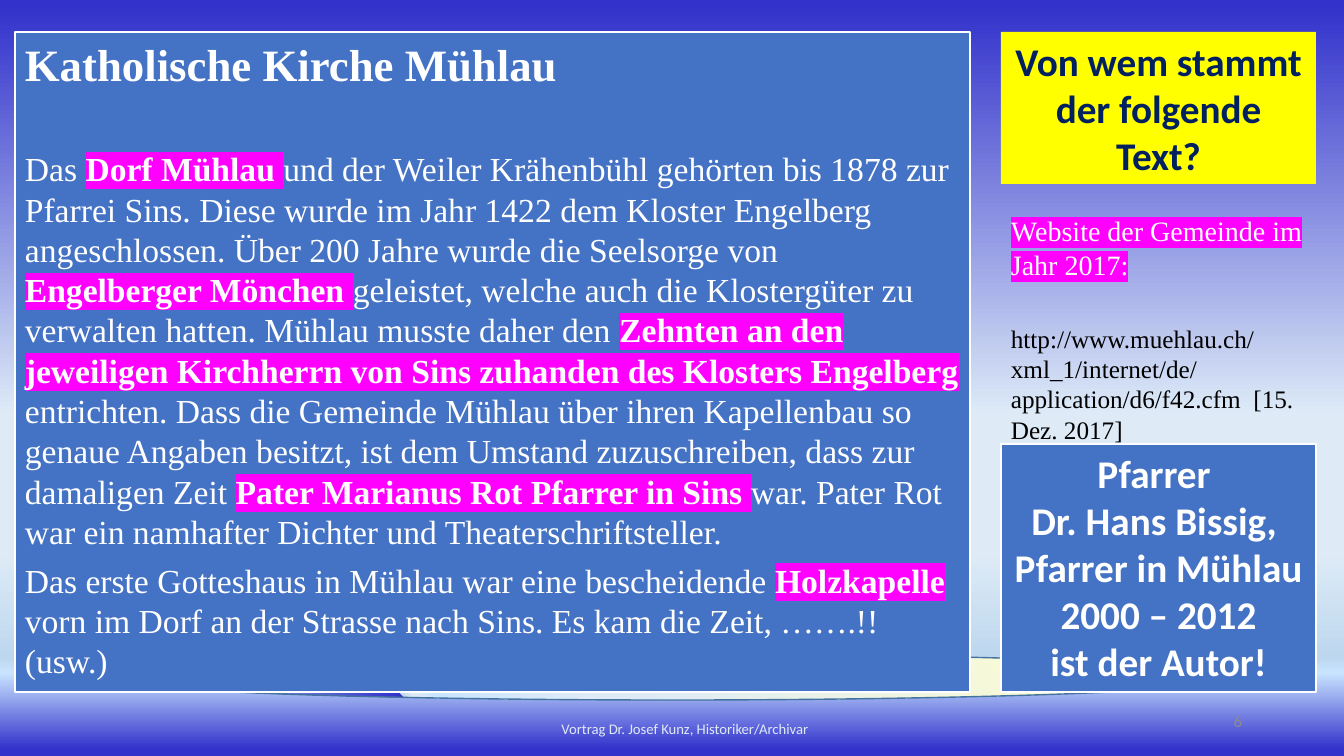
from lxml import etree
from pptx import Presentation
from pptx.dml.color import RGBColor
from pptx.enum.shapes import MSO_SHAPE
from pptx.enum.text import MSO_ANCHOR, PP_ALIGN
from pptx.oxml.ns import qn
from pptx.util import Emu, Pt

# --- Content ---
C = {"blue": "4472C4", "white": "FFFFFF", "yellow": "FFFF00", "navy": "002060",
     "pink": "FF00FF", "black": "000000", "grey": "8C8C8C", "outline": "43739E",
     "indigo": "3333CC", "pale": "DEEBF7", "sky": "BDD7EE", "ice": "C9E4FF",
     "cream": "FFFFCC"}
SERIF, SANS = "Times New Roman", "Calibri"

BACKGROUND = [(1, "indigo"), (55, "pale"), (58, "pale"), (73, "pale"),
              (87, "sky"), (89, "ice"), (99, "indigo")]
ELLIPSE = [(10, "cream"), (55, "pale"), (58, "pale"), (71, "ice"),
           (73, "pale"), (74, "sky"), (74, "indigo"), (96, "sky")]

TITLE = "Katholische Kirche Mühlau"
# Runs alternate: plain, marked, plain, marked ...
HISTORY = [
    "Das ", "Dorf Mühlau ",
    "und der Weiler Krähenbühl gehörten bis 1878 zur Pfarrei Sins. Diese wurde im "
    "Jahr 1422 dem Kloster Engelberg angeschlossen. Über 200 Jahre wurde die "
    "Seelsorge von ",
    "Engelberger Mönchen ",
    "geleistet, welche auch die Klostergüter zu verwalten hatten. Mühlau musste "
    "daher den ",
    "Zehnten an den jeweiligen Kirchherrn von Sins zuhanden des Klosters Engelberg ",
    "entrichten. Dass die Gemeinde Mühlau über ihren Kapellenbau so genaue Angaben "
    "besitzt, ist dem Umstand zuzuschreiben, dass zur damaligen Zeit ",
    "Pater Marianus Rot Pfarrer in Sins ",
    "war. Pater Rot war ein namhafter Dichter und Theaterschriftsteller."]
CHAPEL = [
    "Das erste Gotteshaus in Mühlau war eine bescheidende ", "Holzkapelle",
    " vorn im Dorf an der Strasse nach Sins. Es kam die Zeit, …….!! (usw.)"]
QUESTION = "Von wem stammt der folgende Text?"
WEBSITE = "Website der Gemeinde im Jahr 2017:"
ADDRESS = ("http://www.muehlau.ch/xml_1/internet/de/application/d6/f42.cfm"
           "  [15. Dez. 2017]")
ANSWER = ["Pfarrer ", "Dr. Hans Bissig, ", "Pfarrer in Mühlau", "2000 – 2012",
          "ist der Autor!"]
FOOTER, PAGE = "Vortrag Dr. Josef Kunz, Historiker/Archivar", "6"

# --- Layout in px ---
PX = 914400 / 100.8
TOP, BOTTOM = 32, 692
COL_X, COL_W = 1001, 315
ANSWER_Y = 444


def px(*lengths):
    return [Emu(round(n * PX)) for n in lengths]


def rgb(name):
    return RGBColor.from_string(C[name])


def set_gradient(fill, parent, stops, angle):
    """Give a fill any number of colour stops; angle runs clockwise."""
    fill.gradient()
    grad = parent.find(".//" + qn("a:gradFill"))
    gs_list = grad.find(qn("a:gsLst"))
    for gs in list(gs_list):
        gs_list.remove(gs)
    for pos, name in stops:
        gs = etree.SubElement(gs_list, qn("a:gs"), pos=str(pos * 1000))
        etree.SubElement(gs, qn("a:srgbClr"), val=C[name])
    grad.find(qn("a:lin")).set("ang", str(angle * 60000))


def add_panel(shape, box, fill, line=None, width=1.5):
    sp = s.shapes.add_shape(shape, *px(*box))
    sp.shadow.inherit = False
    if isinstance(fill, str):
        sp.fill.solid()
        sp.fill.fore_color.rgb = rgb(fill)
    else:
        set_gradient(sp.fill, sp.element.spPr, *fill)
    if line:
        sp.line.color.rgb = rgb(line)
        sp.line.width = Pt(width)
    else:
        sp.line.fill.background()
    return sp


def open_text(sp, anchor=MSO_ANCHOR.TOP):
    tf = sp.text_frame
    tf.word_wrap = True
    tf.vertical_anchor = anchor
    return tf


def add_paragraph(tf, runs, size, font, color, align=PP_ALIGN.LEFT, before=0):
    """runs: (text, bold, highlight colour or None)"""
    p = tf.paragraphs[0] if not tf.paragraphs[0].runs else tf.add_paragraph()
    p.alignment = align
    p.space_before = Pt(before)
    for text, bold, mark in runs:
        r = p.add_run()
        r.text = text
        r.font.size, r.font.name, r.font.bold = Pt(size), font, bold
        r.font.color.rgb = rgb(color)
        if mark:
            highlight = etree.Element(qn("a:highlight"))
            etree.SubElement(highlight, qn("a:srgbClr"), val=C[mark])
            r.font.fill  # colour precedes highlight in the run properties
            r._r.rPr.find(qn("a:solidFill")).addnext(highlight)


def alternate(texts):
    return [(t, i % 2 == 1, "pink" if i % 2 else None) for i, t in enumerate(texts)]


prs = Presentation()
prs.slide_width, prs.slide_height = px(1344, 756)
s = prs.slides.add_slide(prs.slide_layouts[6])

# --- Background and ellipse ---
set_gradient(s.background.fill, s.element, BACKGROUND, 90)
add_panel(MSO_SHAPE.OVAL, (93, 654, 1159, 46), (ELLIPSE, 135), "outline", 1)

# --- Footer and page number ---
for box, text, size, color, align in [
        ((438, 716, 494, 26), FOOTER, 10.5, "pale", PP_ALIGN.CENTER),
        ((950, 701, 302, 40), PAGE, 12, "grey", PP_ALIGN.RIGHT)]:
    tf = open_text(s.shapes.add_textbox(*px(*box)), MSO_ANCHOR.MIDDLE)
    add_paragraph(tf, [(text, False, None)], size, SANS, color, align)

# --- Main text ---
tf = open_text(add_panel(MSO_SHAPE.RECTANGLE, (15, TOP, 955, BOTTOM - TOP),
                         "blue", "white"))
add_paragraph(tf, [(TITLE, True, None)], 32, SERIF, "white", before=6)
add_paragraph(tf, alternate(HISTORY), 24, SERIF, "white", before=41)
add_paragraph(tf, alternate(CHAPEL), 24, SERIF, "white", before=6)

# --- Question and answer ---
for y, h, fill, line, lines, color in [
        (TOP, 152, "yellow", None, [QUESTION], "navy"),
        (ANSWER_Y, BOTTOM - ANSWER_Y, "blue", "white", ANSWER, "white")]:
    tf = open_text(add_panel(MSO_SHAPE.RECTANGLE, (COL_X, y, COL_W, h), fill, line))
    for text in lines:
        add_paragraph(tf, [(text, True, None)], 28, SANS, color, PP_ALIGN.CENTER)

# --- Web source ---
tf = open_text(s.shapes.add_textbox(*px(COL_X, 209, COL_W, 212)))
add_paragraph(tf, [(WEBSITE, False, "pink")], 20, SERIF, "white", before=6)
add_paragraph(tf, [(ADDRESS, False, None)], 18, SERIF, "black", before=30)

prs.save("out.pptx")
